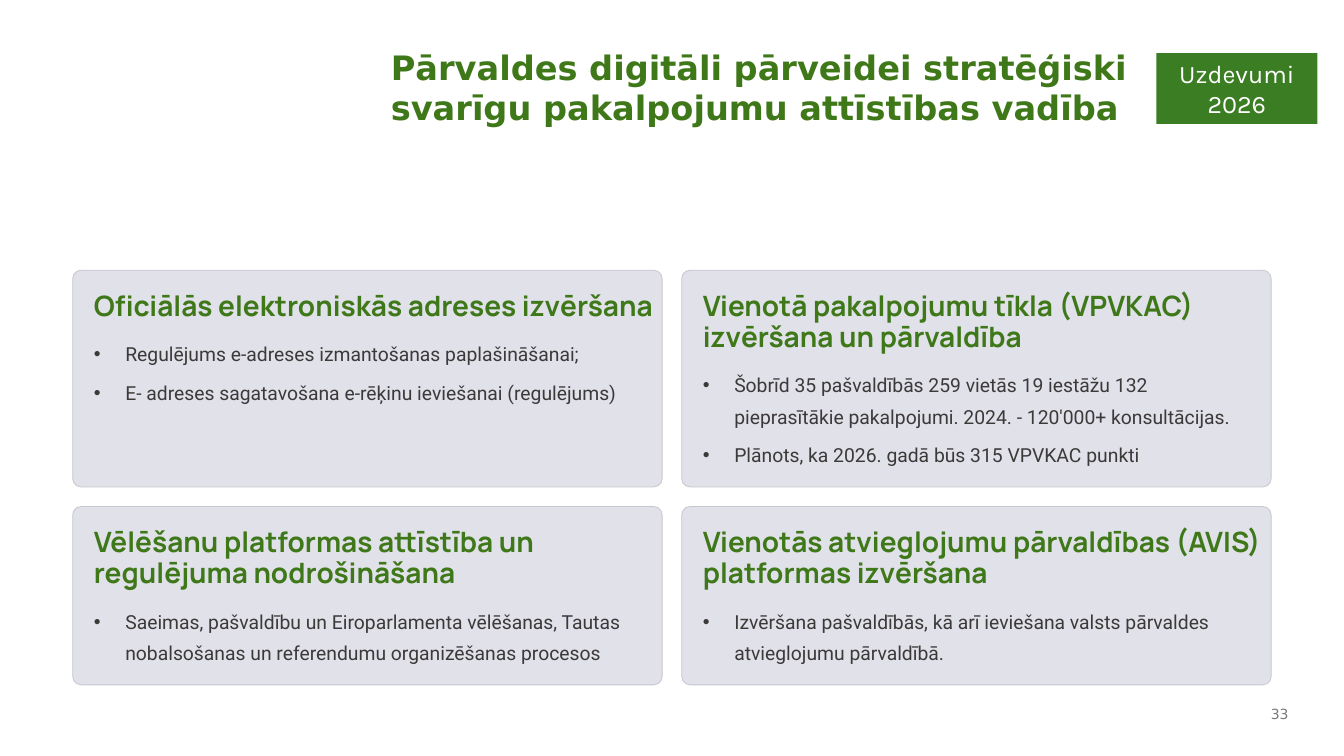
from lxml.etree import SubElement
from pptx import Presentation
from pptx.dml.color import RGBColor
from pptx.enum.shapes import MSO_SHAPE as Shape
from pptx.enum.text import MSO_ANCHOR as Anchor, MSO_AUTO_SIZE as AutoSize, PP_ALIGN as Align
from pptx.oxml.ns import qn
from pptx.util import Pt

# Content
TITLE = "Pārvaldes digitāli pārveidei stratēģiski svarīgu pakalpojumu attīstības vadība"
BADGE = ["Uzdevumi", "2026"]
PAGE_NUMBER = "33"
# Cards row by row: heading, lines the heading takes, bullets
CARDS = [
    ("Oficiālās elektroniskās adreses izvēršana", 1,
     ["Regulējums e-adreses izmantošanas paplašināšanai;",
      "E- adreses sagatavošana e-rēķinu ieviešanai (regulējums)"]),
    ("Vienotā pakalpojumu tīkla (VPVKAC) izvēršana un pārvaldība", 2,
     ["Šobrīd 35 pašvaldībās 259 vietās 19 iestāžu 132 pieprasītākie pakalpojumi. "
      "2024. - 120'000+ konsultācijas.",
      "Plānots, ka 2026. gadā būs 315 VPVKAC punkti"]),
    ("Vēlēšanu platformas attīstība un regulējuma nodrošināšana", 2,
     ["Saeimas, pašvaldību un Eiroparlamenta vēlēšanas, Tautas nobalsošanas "
      "un referendumu organizēšanas procesos"]),
    ("Vienotās atvieglojumu pārvaldības (AVIS) platformas izvēršana", 2,
     ["Izvēršana pašvaldībās, kā arī ieviešana valsts pārvaldes atvieglojumu pārvaldībā."]),
]

# Theme
THEME = {
    "card": "E1E1EA", "card_line": "C7C7D0", "badge": "3B7D23",
    "title": {"name": "DejaVu Sans", "size": 24, "color": "3F7819", "bold": True},
    "heading": {"name": "Manrope", "size": 20, "color": "3F7819", "bold": True},
    "bullet": {"name": "Roboto", "size": 13.8, "color": "3C3939", "bold": False},
    "badge_text": {"name": "Karla", "size": 18, "color": "FFFFFF", "bold": False},
    "number": {"name": "DejaVu Sans", "size": 10, "color": "797979", "bold": False},
}

# Grid, in points
LEFT, TOP, CARD_WIDTH, GAP = 52, 193, 421, 14
ROW_HEIGHTS = [154.8, 127.4]
RADIUS, PADDING, HEADING_GAP = 5.94, 15, 8.7
HEADING_LINE, BULLET_LINE, BULLET_SPACE, INDENT = 22.1, 22.5, 5, 22.5
BODY_WIDTH = 392


def place(box, left, top, width, height):
    box.left, box.top, box.width, box.height = map(Pt, (left, top, width, height))


def write(box, lines, style, align=Align.LEFT, anchor=Anchor.TOP, margin=None,
          spacing=None, between=0, bullets=False):
    frame = box.text_frame
    settings = {"word_wrap": True, "auto_size": AutoSize.NONE, "vertical_anchor": anchor}
    if margin is not None:
        settings.update({f"margin_{side}": Pt(margin)
                         for side in ("left", "top", "right", "bottom")})
    for name, value in settings.items():
        setattr(frame, name, value)
    for index, line in enumerate(lines):
        para = frame.add_paragraph() if index else frame.paragraphs[0]
        if bullets:
            props = para._p.get_or_add_pPr()
            props.set("marL", str(Pt(INDENT)))
            props.set("indent", str(-Pt(INDENT)))
            SubElement(props, qn("a:buChar")).set("char", "•")
        para.alignment = align
        para.space_before = Pt(between if index else 0)
        if spacing:
            para.line_spacing = Pt(spacing)
        span = para.add_run()
        span.text = line
        look = THEME[style]
        for name, value in {"name": look["name"], "size": Pt(look["size"]),
                            "bold": look["bold"]}.items():
            setattr(span.font, name, value)
        span.font.color.rgb = RGBColor.from_string(look["color"])


def add_panel(page, kind, area, fill):
    panel = page.shapes.add_shape(kind, *map(Pt, area))
    panel.shadow.inherit = False
    panel.fill.solid()
    panel.fill.fore_color.rgb = RGBColor.from_string(THEME[fill])
    panel.line.fill.background()
    return panel


def add_card(page, body, area, heading, heading_lines, bullets):
    left, top, width, height = area
    card = add_panel(page, Shape.ROUNDED_RECTANGLE, area, "card")
    card.adjustments[0] = RADIUS / height
    card.line.color.rgb = RGBColor.from_string(THEME["card_line"])
    card.line.width = Pt(0.6)

    text_left, text_top = left + PADDING, top + PADDING
    heading_height = heading_lines * HEADING_LINE
    box = page.shapes.add_textbox(
        *map(Pt, (text_left, text_top, width - PADDING, heading_height)))
    write(box, [heading], "heading", margin=0, spacing=HEADING_LINE)

    body_top = text_top + heading_height + HEADING_GAP
    place(body, text_left, body_top, BODY_WIDTH, top + height - PADDING - body_top)
    write(body, bullets, "bullet", margin=0, spacing=BULLET_LINE,
          between=BULLET_SPACE, bullets=True)
    # Bring the list in front of its card
    card._element.addnext(body._element)


def main():
    deck = Presentation()
    deck.slide_width, deck.slide_height = Pt(960), Pt(540)
    # The comparison layout has a title and four body placeholders
    page = deck.slides.add_slide(deck.slide_layouts[4])
    title, *bodies = page.placeholders

    # Cards
    for index, (body, content) in enumerate(zip(bodies, CARDS)):
        row, column = divmod(index, 2)
        area = (LEFT + column * (CARD_WIDTH + GAP),
                TOP + sum(ROW_HEIGHTS[:row]) + row * GAP,
                CARD_WIDTH, ROW_HEIGHTS[row])
        add_card(page, body, area, *content)

    # Title and badge
    place(title, 272, 30, 640, 81)
    write(title, [TITLE], "title")
    badge = add_panel(page, Shape.RECTANGLE, (826, 38, 115, 50.5), "badge")
    write(badge, BADGE, "badge_text", Align.CENTER, Anchor.MIDDLE)

    # Page number
    number = page.shapes.add_textbox(*map(Pt, (896, 498, 31.5, 24)))
    write(number, [PAGE_NUMBER], "number", Align.RIGHT, Anchor.MIDDLE)

    deck.save("out.pptx")


if __name__ == "__main__":
    main()
